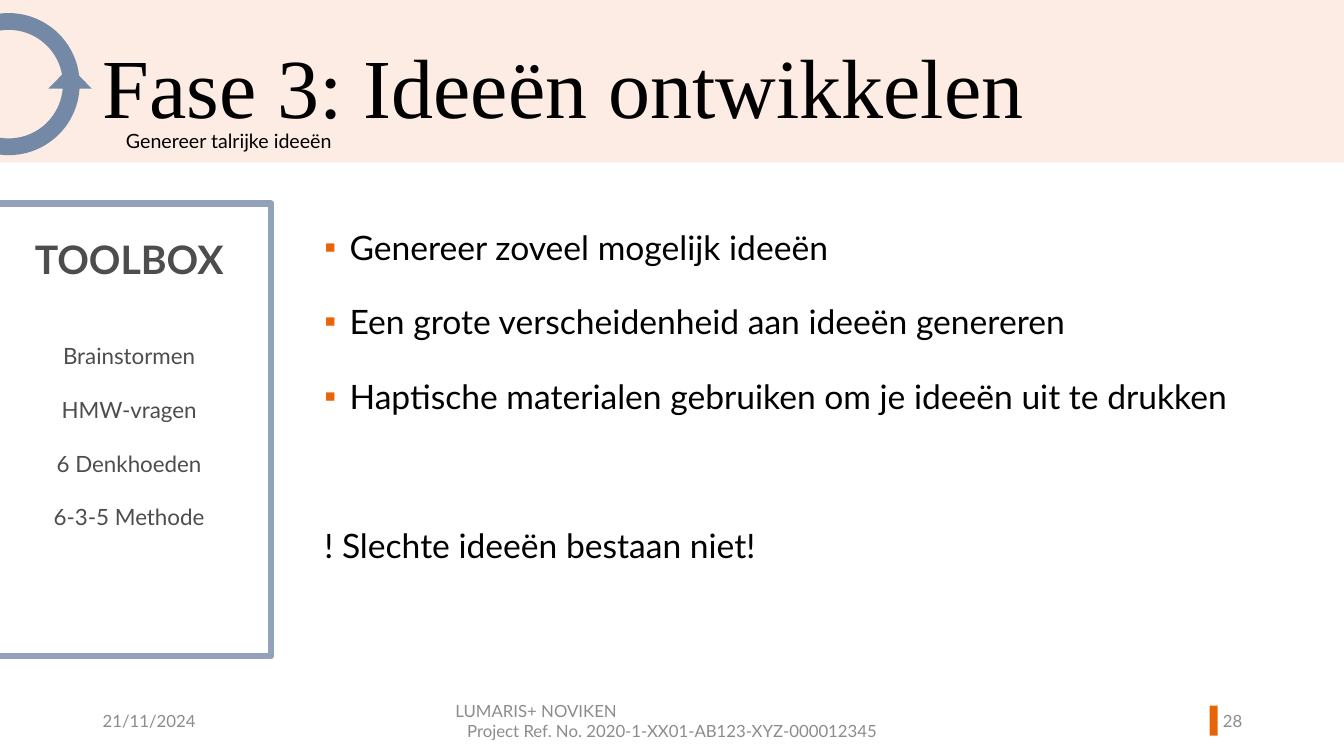
from lxml import etree
from pptx import Presentation
from pptx.dml.color import RGBColor
from pptx.enum.shapes import MSO_SHAPE
from pptx.enum.text import MSO_ANCHOR, PP_ALIGN
from pptx.oxml.ns import qn
from pptx.util import Inches, Pt

WIDTH, HEIGHT = Inches(13.333), Inches(7.5)
BLACK, GREY, DARK = "000000", "8C8C8C", "4D4D4D"
ORANGE, PEACH, BLUE, FRAME, WHITE = "E86507", "FDECE3", "7489A6", "92A2BA", "FFFFFF"
SANS, SERIF = "Lato", "Times New Roman"
LEFT, CENTER, RIGHT = PP_ALIGN.LEFT, PP_ALIGN.CENTER, PP_ALIGN.RIGHT


def rgb(color):
    return RGBColor.from_string(color)


def area(x, y, w, h):
    """Turn percentages of the slide into a position and size."""
    return [int(share * side / 100)
            for share, side in zip((x, y, w, h), (WIDTH, HEIGHT) * 2)]


def add_block(s, kind, place, fill, line=None):
    sp = s.shapes.add_shape(kind, *area(*place))
    sp.shadow.inherit = False
    sp.fill.solid()
    sp.fill.fore_color.rgb = rgb(fill)
    if line:
        sp.line.color.rgb = rgb(line)
        sp.line.width = Pt(4.5)
    else:
        sp.line.fill.background()
    return sp


def add_frame(s, place, anchor=MSO_ANCHOR.TOP):
    tf = s.shapes.add_textbox(*area(*place)).text_frame
    tf.word_wrap = True
    tf.vertical_anchor = anchor
    return tf


def add_line(tf, text, size, color, align=LEFT, before=0, spacing=1.0,
             bold=False, font=SANS):
    first = tf.paragraphs[0]
    p = tf.add_paragraph() if first.runs else first
    p.alignment, p.line_spacing, p.space_before = align, spacing, Pt(before)
    r = p.add_run()
    r.text = text
    r.font.name, r.font.size, r.font.bold = font, Pt(size), bold
    r.font.color.rgb = rgb(color)
    return p


def add_bullet(p):
    pPr = p._p.get_or_add_pPr()
    pPr.set("marL", str(Inches(0.25)))
    pPr.set("indent", str(-Inches(0.25)))
    color = etree.SubElement(pPr, qn("a:buClr"))
    etree.SubElement(color, qn("a:srgbClr"), val=ORANGE)
    etree.SubElement(pPr, qn("a:buFont"), typeface=SERIF)
    etree.SubElement(pPr, qn("a:buChar"), char="▪")


def add_header(s):
    add_block(s, MSO_SHAPE.RECTANGLE, (0, 0, 100, 21.5), PEACH)
    tf = add_frame(s, (6.9, 5.47, 74.5, 11.33))
    add_line(tf, "Fase 3: Ideeën ontwikkelen", 60, BLACK, spacing=0.9, font=SERIF)
    # Cycle symbol: ring with arrow tip
    ring = add_block(s, MSO_SHAPE.DONUT, (-4.65, 1.73, 10.58, 18.8), BLUE)
    ring.adjustments[0] = 0.118
    add_block(s, MSO_SHAPE.ISOSCELES_TRIANGLE, (3.6, 8.8, 3.23, 2.93), BLUE)
    tf = add_frame(s, (8.63, 16.4, 29.1, 4.53))
    add_line(tf, "Genereer talrijke ideeën", 14, BLACK)


def add_toolbox(s, tools):
    sp = add_block(s, MSO_SHAPE.RECTANGLE, (-0.97, 26.93, 21.15, 59.87), WHITE, FRAME)
    tf = sp.text_frame
    tf.word_wrap = True
    tf.vertical_anchor = MSO_ANCHOR.TOP
    tf.margin_top = Inches(0.31)
    add_line(tf, "TOOLBOX", 28, DARK, CENTER, bold=True)
    for i, tool in enumerate(tools):
        add_line(tf, tool, 16, DARK, CENTER, before=19.2 if i else 43.2)


def add_body(s, points, remark):
    tf = add_frame(s, (23.4, 26.67, 69.75, 63.47))
    for i, point in enumerate(points):
        add_bullet(add_line(tf, point, 24, BLACK, before=10 if i else 0, spacing=1.5))
    add_line(tf, remark, 24, BLACK, before=63.2, spacing=1.5)


def add_footer(s):
    add_block(s, MSO_SHAPE.RECTANGLE, (90, 93.33, 0.6, 4), ORANGE)
    # Left share, width share, lines with their alignment
    cells = [
        (6.9, 22.5, [("21/11/2024", LEFT)]),
        (33.15, 33.75, [("LUMARIS+ NOVIKEN", LEFT),
                        ("Project Ref. No. 2020-1-XX01-AB123-XYZ-000012345", CENTER)]),
        (88.3, 4.88, [("28", RIGHT)]),
    ]
    for x, w, lines in cells:
        tf = add_frame(s, (x, 92.67, w, 5.33), MSO_ANCHOR.MIDDLE)
        for text, align in lines:
            add_line(tf, text, 12, GREY, align)


def main():
    prs = Presentation()
    prs.slide_width, prs.slide_height = WIDTH, HEIGHT
    s = prs.slides.add_slide(prs.slide_layouts[6])
    add_header(s)
    add_toolbox(s, ["Brainstormen", "HMW-vragen", "6 Denkhoeden", "6-3-5 Methode"])
    add_body(s, ["Genereer zoveel mogelijk ideeën",
                 "Een grote verscheidenheid aan ideeën genereren",
                 "Haptische materialen gebruiken om je ideeën uit te drukken"],
             "! Slechte ideeën bestaan niet!")
    add_footer(s)
    prs.save("out.pptx")


if __name__ == "__main__":
    main()
